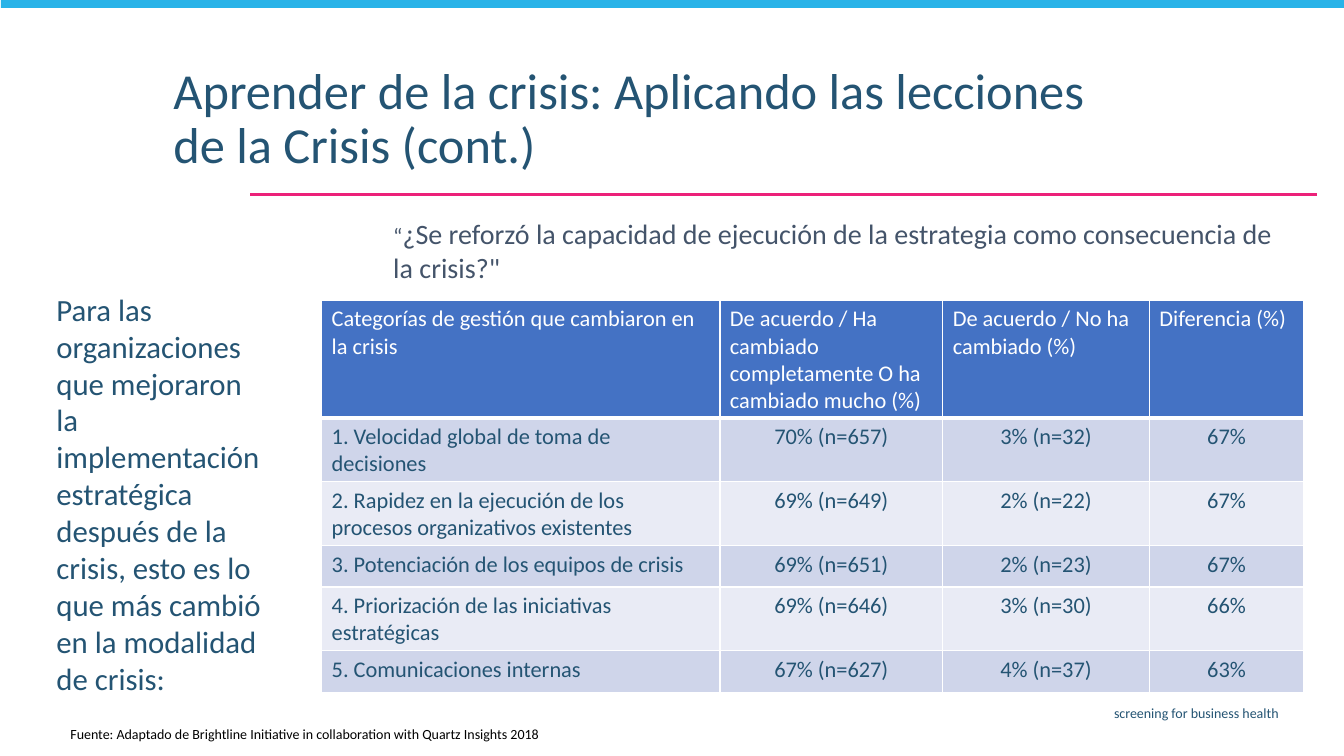
from dataclasses import dataclass

from lxml import etree
from pptx import Presentation
from pptx.dml.color import RGBColor
from pptx.enum.shapes import MSO_CONNECTOR, MSO_SHAPE
from pptx.enum.text import MSO_ANCHOR, MSO_AUTO_SIZE, PP_ALIGN
from pptx.oxml.ns import qn
from pptx.util import Inches, Pt

LEFT, CENTER, RIGHT = PP_ALIGN.LEFT, PP_ALIGN.CENTER, PP_ALIGN.RIGHT
TOP, BOTTOM = MSO_ANCHOR.TOP, MSO_ANCHOR.BOTTOM

TITLE = "Aprender de la crisis: Aplicando las lecciones de la Crisis (cont.)"
INTRO = ("Para las organizaciones que mejoraron la implementación estratégica después "
         "de la crisis, esto es lo que más cambió en la modalidad de crisis:")
OPENING_QUOTE = "“"
QUESTION = ('¿Se reforzó la capacidad de ejecución de la estrategia como '
            'consecuencia de la crisis?"')
SOURCE = ("Fuente: Adaptado de Brightline Initiative in collaboration with "
          "Quartz Insights 2018")
TAGLINE = "screening for business health"
HEADER = (
    "Categorías de gestión que cambiaron en la crisis",
    "De acuerdo / Ha cambiado completamente O ha cambiado mucho (%)",
    "De acuerdo / No ha cambiado (%)",
    "Diferencia (%)",
)
CATEGORIES = [
    ("1. Velocidad global de toma de decisiones", "70% (n=657)", "3% (n=32)", "67%"),
    ("2. Rapidez en la ejecución de los procesos organizativos existentes",
     "69% (n=649)", "2% (n=22)", "67%"),
    ("3. Potenciación de los equipos de crisis", "69% (n=651)", "2% (n=23)", "67%"),
    ("4. Priorización de las iniciativas estratégicas",
     "69% (n=646)", "3% (n=30)", "66%"),
    ("5. Comunicaciones internas", "67% (n=627)", "4% (n=37)", "63%"),
]
COLUMN_WIDTHS = (3.95, 2.21, 2.05, 1.53)
ROW_HEIGHT = 0.41


@dataclass(frozen=True)
class Theme:
    font: str = "Calibri"
    ink: str = "245473"
    slate: str = "44546A"
    black: str = "000000"
    white: str = "FFFFFF"
    sky: str = "29B3E8"
    pink: str = "EC2179"
    header: str = "4472C4"
    bands: tuple = ("CFD5EA", "E9EBF5")
    title_size: int = 36
    intro_size: int = 22
    question_size: int = 20
    table_size: int = 16
    small_size: int = 10


THEME = Theme()


def color(code):
    return RGBColor.from_string(code)


def box(left, top, width, height):
    return [Inches(v) for v in (left, top, width, height)]


def style(paragraph, size, ink, align=LEFT):
    paragraph.alignment = align
    font = paragraph.font
    font.name, font.size, font.bold = THEME.font, Pt(size), False
    font.color.rgb = color(ink)


def add_text(slide, place, words, size, ink, align=LEFT, anchor=TOP, insets=(0.1, 0.05)):
    frame = slide.shapes.add_textbox(*box(*place)).text_frame
    frame.word_wrap = True
    frame.vertical_anchor = anchor
    frame.margin_left = frame.margin_right = Inches(insets[0])
    frame.margin_top = frame.margin_bottom = Inches(insets[1])
    paragraph = frame.paragraphs[0]
    paragraph.text = words
    style(paragraph, size, ink, align)
    return paragraph


def add_decor(slide):
    band = slide.shapes.add_shape(MSO_SHAPE.RECTANGLE, *box(0.01, -0.02, 13.34, 0.1))
    band.shadow.inherit = False
    band.fill.solid()
    band.fill.fore_color.rgb = color(THEME.sky)
    band.line.fill.background()
    rule = slide.shapes.add_connector(
        MSO_CONNECTOR.STRAIGHT, *box(2.48, 1.93, 13.06, 1.93))
    rule.line.color.rgb = color(THEME.pink)
    rule.line.width = Pt(1.5)
    etree.SubElement(rule._element.spPr, qn("a:effectLst"))


def add_title(slide):
    title = slide.shapes.title
    title.left, title.top, title.width, title.height = box(1.62, 0.6, 9.68, 0.76)
    frame = title.text_frame
    frame.auto_size = MSO_AUTO_SIZE.NONE
    frame.word_wrap = True
    frame.vertical_anchor = TOP
    frame.text = TITLE
    paragraph = frame.paragraphs[0]
    paragraph.line_spacing = 0.9
    style(paragraph, THEME.title_size, THEME.ink)


def set_borders(cell, is_header):
    properties = cell._tc.get_or_add_tcPr()
    for side in ("L", "R", "T", "B"):
        points = 3 if is_header and side == "B" else 1
        line = etree.SubElement(properties, qn(f"a:ln{side}"), w=str(Pt(points)))
        fill = etree.SubElement(line, qn("a:solidFill"))
        etree.SubElement(fill, qn("a:srgbClr"), val=THEME.white)


def add_categories(slide):
    rows = [HEADER, *CATEGORIES]
    place = box(3.19, 2.98, sum(COLUMN_WIDTHS), ROW_HEIGHT * len(rows))
    table = slide.shapes.add_table(len(rows), len(HEADER), *place).table
    for column, width in zip(table.columns, COLUMN_WIDTHS):
        column.width = Inches(width)
    for r, row in enumerate(rows):
        table.rows[r].height = Inches(ROW_HEIGHT)
        is_header = r == 0
        back = THEME.header if is_header else THEME.bands[(r - 1) % 2]
        ink = THEME.white if is_header else THEME.ink
        for c, words in enumerate(row):
            cell = table.cell(r, c)
            set_borders(cell, is_header)
            cell.fill.solid()
            cell.fill.fore_color.rgb = color(back)
            cell.text = words
            align = LEFT if is_header or c == 0 else CENTER
            style(cell.text_frame.paragraphs[0], THEME.table_size, ink, align)


def main():
    deck = Presentation()
    deck.slide_width, deck.slide_height = Inches(13.33), Inches(7.5)
    slide = deck.slides.add_slide(deck.slide_layouts[5])
    add_decor(slide)
    add_title(slide)
    add_text(slide, (3.65, 6.94, 9.13, 0.29), TAGLINE, THEME.small_size, THEME.ink, RIGHT)
    add_text(slide, (0.47, 2.84, 2.3, 3.79), INTRO, THEME.intro_size, THEME.ink,
             insets=(0.09, 0.04))
    add_text(slide, (0.6, 7.14, 6.06, 0.27), SOURCE, THEME.small_size, THEME.black,
             anchor=BOTTOM)
    question = add_text(slide, (3.86, 2.13, 9.01, 0.71), OPENING_QUOTE,
                        THEME.question_size, THEME.slate, insets=(0.04, 0.02))
    question.runs[0].font.size = Pt(THEME.table_size)
    question.add_run().text = QUESTION
    add_categories(slide)
    deck.save("out.pptx")


if __name__ == "__main__":
    main()
